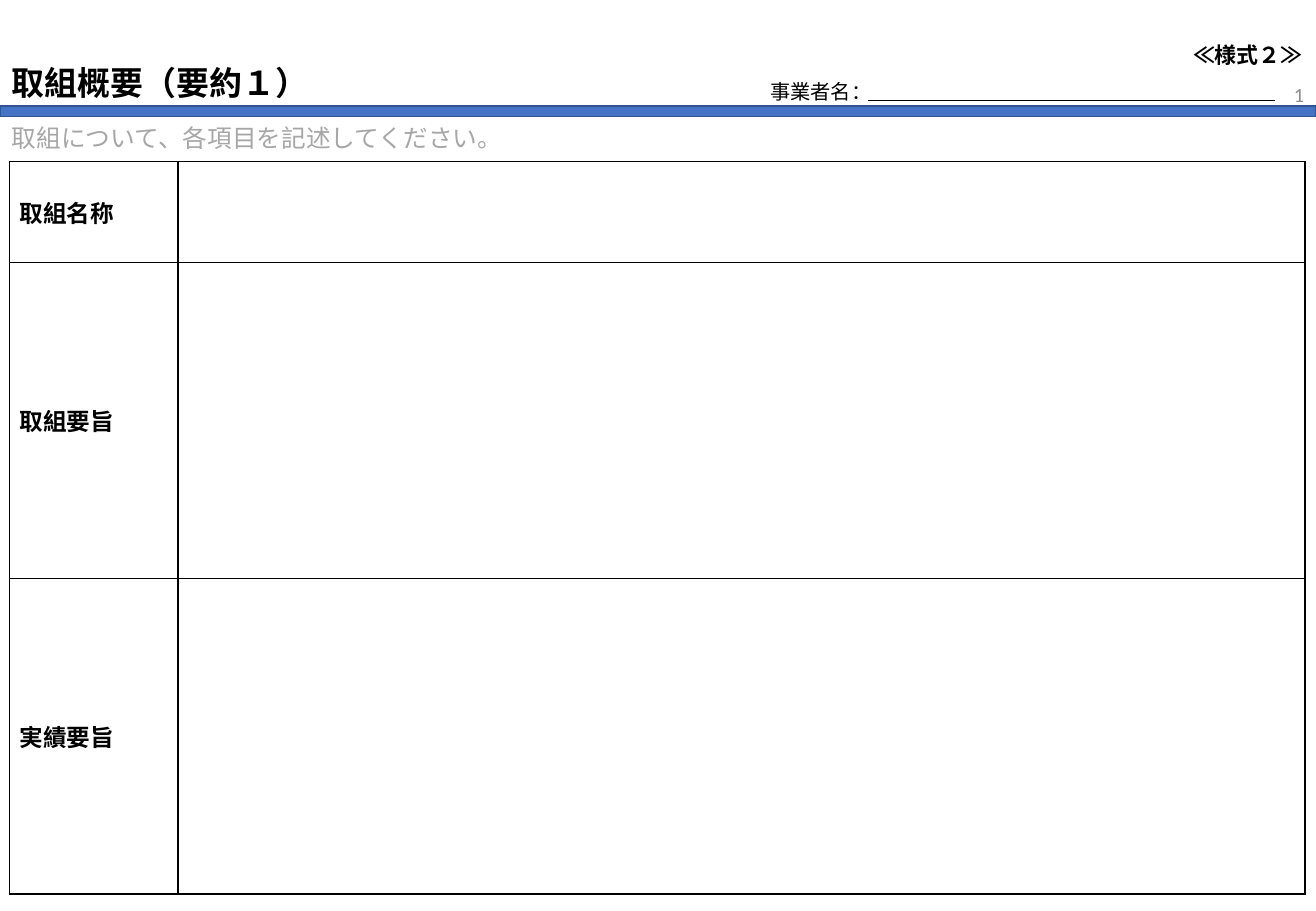
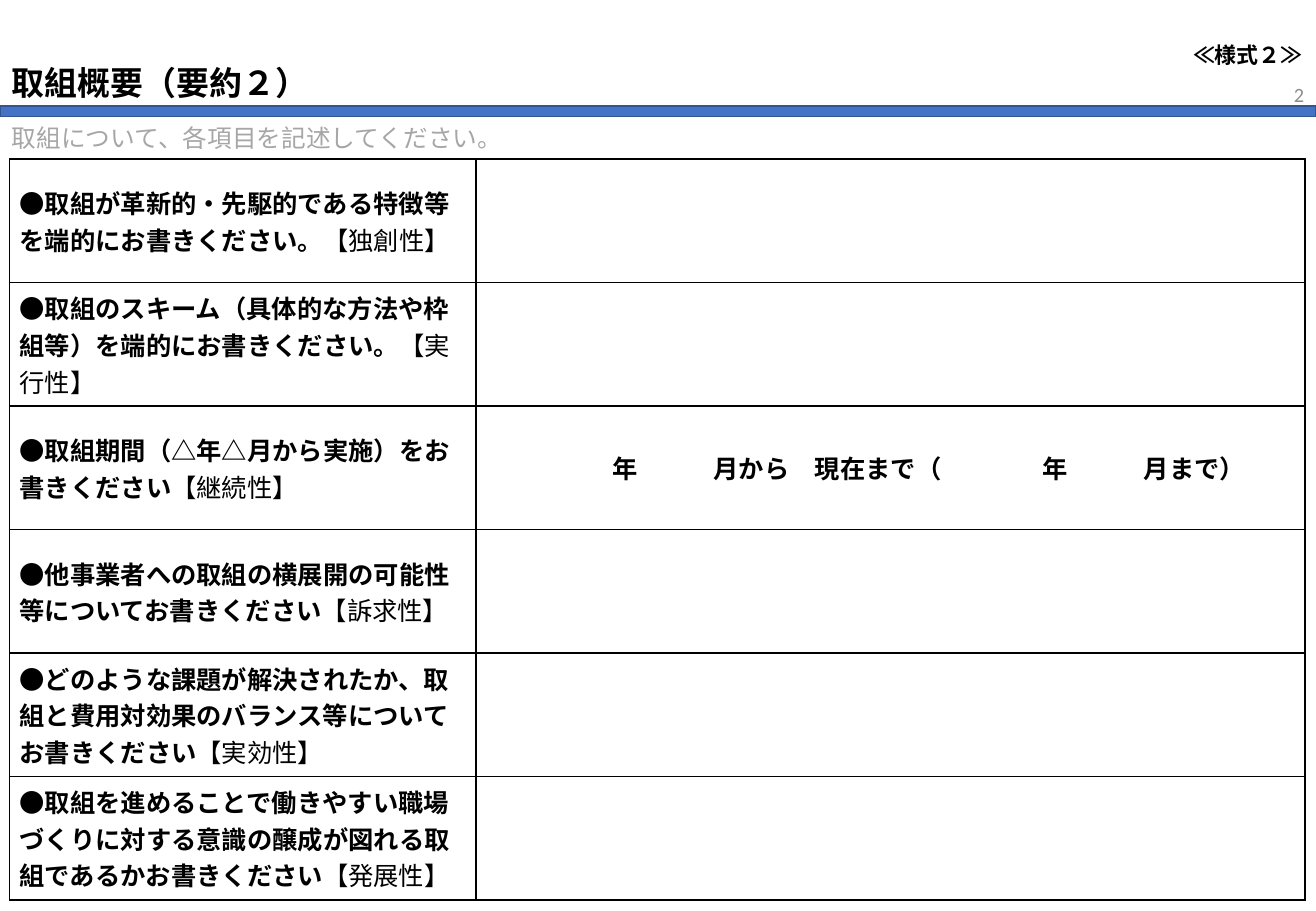
"""Build the two summary form slides, each with a header band and a bordered table."""
from lxml.etree import SubElement
from pptx import Presentation
from pptx.dml.color import RGBColor as Color
from pptx.enum.shapes import MSO_CONNECTOR as Connector, MSO_SHAPE as Preset
from pptx.enum.text import MSO_ANCHOR as Anchor, MSO_AUTO_SIZE as AutoSize, PP_ALIGN as Align
from pptx.oxml.ns import qn
from pptx.util import Inches, Pt

COLORS = {"band": "4472C4", "edge": "325491", "ink": "000000", "hint": "A6A6A6", "number": "8C8C8C"}
FONT = "Calibri"
CELL_SIZE = {1: 14, 2: 15}

SLIDES = [
    {
        "title": "取組概要（要約１）",
        "top": 17.73,
        "columns": [13, 87],
        "rows": [13.8, 43.1, 43.1],
        "height": 80.4,
        "labels": [("取組名称", ""), ("取組要旨", ""), ("実績要旨", "")],
    },
    {
        "title": "取組概要（要約２）",
        "top": 17.47,
        "columns": [36, 64],
        "rows": [100 / 6] * 6,
        "height": 81.33,
        "labels": [
            ("●取組が革新的・先駆的である特徴等を端的にお書きください。", "【独創性】"),
            ("●取組のスキーム（具体的な方法や枠組等）を端的にお書きください。", "【実行性】"),
            ("●取組期間（△年△月から実施）をお書きください", "【継続性】"),
            ("●他事業者への取組の横展開の可能性等についてお書きください", "【訴求性】"),
            ("●どのような課題が解決されたか、取組と費用対効果のバランス等についてお書きください", "【実効性】"),
            ("●取組を進めることで働きやすい職場づくりに対する意識の醸成が図れる取組であるかお書きください", "【発展性】"),
        ],
    },
]
PERIOD_ROW = 2
PERIOD_TEXT = "\t年\t月から　現在まで（\t年\t月まで）"
PERIOD_STOPS = [5, 9, 22, 26]

presentation = Presentation()
presentation.slide_width = Inches(10.83)
presentation.slide_height = Inches(7.5)


def place(left, top, width, height):
    """Turn percentages of the slide into lengths."""
    across, down = presentation.slide_width / 100, presentation.slide_height / 100
    return int(left * across), int(top * down), int(width * across), int(height * down)


def add_text(slide, text, area, size, color="ink", bold=False, wrap=False):
    """Add a one-line text box and return its text frame."""
    frame = slide.shapes.add_textbox(*place(*area)).text_frame
    frame.word_wrap = wrap
    frame.auto_size = AutoSize.SHAPE_TO_FIT_TEXT
    paragraph = frame.paragraphs[0]
    paragraph.text = text
    paragraph.font.name = FONT
    paragraph.font.size = Pt(size)
    paragraph.font.bold = bold
    paragraph.font.color.rgb = Color.from_string(COLORS[color])
    return frame


for number, content in enumerate(SLIDES, 1):
    slide = presentation.slides.add_slide(presentation.slide_layouts[6])

    band = slide.shapes.add_shape(Preset.RECTANGLE, *place(0, 11.6, 100, 1.2))
    band.shadow.inherit = False
    band.fill.solid()
    band.fill.fore_color.rgb = Color.from_string(COLORS["band"])
    band.line.color.rgb = Color.from_string(COLORS["edge"])
    band.line.width = Pt(1)

    add_text(slide, "≪様式２≫", (89.75, 3.87, 10.25, 4.27), 13, bold=True)
    add_text(slide, content["title"], (0, 6.27, 24.56, 5.73), 19.5, bold=True)
    add_text(slide, "取組について、各項目を記述してください。", (0, 12.87, 39.7, 4.67), 14.6, "hint")
    number_frame = add_text(slide, str(number), (95.8, 7.73, 4.2, 5.33), 12, "number", wrap=True)
    number_frame.auto_size = AutoSize.NONE
    number_frame.vertical_anchor = Anchor.MIDDLE
    number_frame.paragraphs[0].alignment = Align.RIGHT

    area = place(0.74, content["top"], 98.43, content["height"])
    shape = slide.shapes.add_table(len(content["rows"]), 2, *area)
    table = shape.table
    table.first_row = table.horz_banding = False
    for column, share in zip(table.columns, content["columns"]):
        column.width = int(area[2] * share / 100)
    for row, share in zip(table.rows, content["rows"]):
        row.height = int(area[3] * share / 100)

    for index, (label, criterion) in enumerate(content["labels"]):
        paragraph = table.cell(index, 0).text_frame.paragraphs[0]
        for text, bold in ((label, True), (criterion, False)):
            if text:
                run = paragraph.add_run()
                run.text = text
                run.font.bold = bold

    if number == 2:
        paragraph = table.cell(PERIOD_ROW, 1).text_frame.paragraphs[0]
        run = paragraph.add_run()
        run.text = PERIOD_TEXT
        run.font.bold = True
        stops = SubElement(paragraph._p.get_or_add_pPr(), qn("a:tabLst"))
        for stop in PERIOD_STOPS:
            SubElement(stops, qn("a:tab"), pos=str(stop * Pt(CELL_SIZE[number])), algn="l")

    for cell in table.iter_cells():
        cell.vertical_anchor = Anchor.MIDDLE
        cell.margin_left = cell.margin_right = Inches(0.08)
        cell.margin_top = cell.margin_bottom = Inches(0.04)
        paragraph = cell.text_frame.paragraphs[0]
        paragraph.font.name = FONT
        paragraph.font.size = Pt(CELL_SIZE[number])
        paragraph.font.color.rgb = Color.from_string(COLORS["ink"])
        properties = cell._tc.get_or_add_tcPr()
        for side in ("lnL", "lnR", "lnT", "lnB"):
            border = SubElement(properties, qn(f"a:{side}"), w=str(Pt(1)))
            SubElement(SubElement(border, qn("a:solidFill")), qn("a:srgbClr"), val=COLORS["ink"])
        cell.fill.background()

    if number == 1:
        add_text(slide, "事業者名：", (57.62, 8, 40.53, 4), 12, wrap=True)
        start_x, start_y, length, rise = place(65.93, 11.07, 30.93, 0)
        underline = slide.shapes.add_connector(
            Connector.STRAIGHT, start_x, start_y, start_x + length, start_y + rise
        )
        underline.line.color.rgb = Color.from_string(COLORS["ink"])
        underline.line.width = Pt(0.5)
        SubElement(underline._element.spPr, qn("a:effectLst"))

presentation.save("out.pptx")
